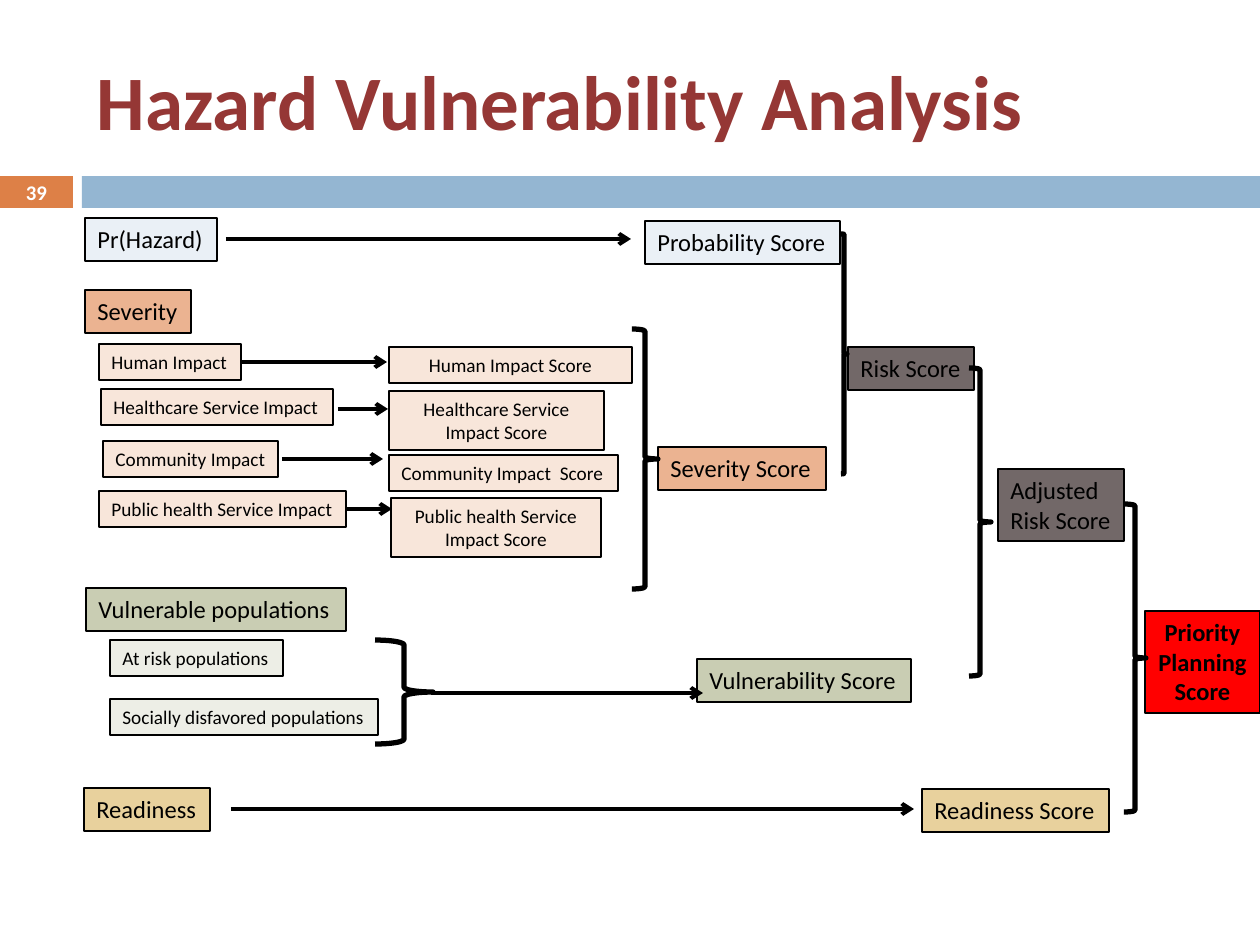
from lxml.etree import SubElement
from pptx import Presentation
from pptx.dml.color import RGBColor
from pptx.enum.shapes import MSO_CONNECTOR, MSO_SHAPE
from pptx.enum.text import MSO_ANCHOR, MSO_AUTO_SIZE, PP_ALIGN
from pptx.oxml.ns import qn
from pptx.util import Emu, Pt

SCALE = 914400 / 126  # EMU in one px
FONT = "Calibri"
COLORS = {
    "title": "953735", "number": "DD8047", "band": "94B6D2", "white": "FFFFFF",
    "black": "000000", "hazard": "EAF0F6", "severity": "EBB391",
    "impact": "F8E6DA", "vulnerable": "C9CDB3", "population": "EDEEE6",
    "readiness": "E8D19D", "risk": "726868", "priority": "FF0000",
}
TITLE = "Hazard Vulnerability Analysis"
PAGE_NUMBER = "39"
LARGE, SMALL = 14, 11

# Boxes: text, colour, size in points, left, top, width, lines
BOXES = [
    ("Pr(Hazard)", "hazard", LARGE, 85, 218, 132, 1),
    ("Severity", "severity", LARGE, 85, 290, 106, 1),
    ("Vulnerable populations", "vulnerable", LARGE, 86, 588, 260, 1),
    ("Readiness", "readiness", LARGE, 84, 788, 126, 1),
    ("Human Impact", "impact", SMALL, 99, 344, 142, 1),
    ("Healthcare Service Impact", "impact", SMALL, 101, 389, 232, 1),
    ("Community Impact", "impact", SMALL, 103, 441, 175, 1),
    ("Public health Service Impact", "impact", SMALL, 99, 491, 247, 1),
    ("At risk populations", "population", SMALL, 110, 640, 173, 1),
    ("Socially disfavored populations", "population", SMALL, 110, 699, 268, 1),
    ("Probability Score", "hazard", LARGE, 645, 221, 195, 1),
    ("Community Impact  Score", "impact", SMALL, 389, 455, 229, 1),
    ("Severity Score", "severity", LARGE, 658, 447, 168, 1),
    ("Risk Score", "risk", LARGE, 848, 347, 126, 1),
    ("Vulnerability Score", "vulnerable", LARGE, 697, 659, 214, 1),
    ("Adjusted\nRisk Score", "risk", LARGE, 998, 469, 126, 2),
    ("Readiness Score", "readiness", LARGE, 922, 789, 187, 1),
]
# Boxes whose text wraps and is centred
WRAPPED_BOXES = [
    ("Human Impact Score", "impact", SMALL, 389, 347, 243, 1),
    ("Healthcare Service Impact Score", "impact", SMALL, 389, 391, 215, 2),
    ("Public health Service Impact Score", "impact", SMALL, 391, 498, 210, 2),
    ("Priority Planning Score", "priority", LARGE, 1145, 611, 115, 3),
]
# Braces: left, top, width, height
BRACES = [
    (632, 329, 26, 260), (841, 234, 6, 240), (375, 640, 58, 104),
    (969, 368, 22, 308), (1124, 504, 22, 308),
]
# Arrows: start x, end x, y, box the arrow leaves from
ARROWS = [
    (226, 631, 239, None), (241, 387, 362, "Human Impact"),
    (338, 388, 409, None), (282, 383, 459, None),
    (347, 392, 509, "Public health Service Impact"),
    (431, 703, 693, None), (231, 914, 809, None),
]


def px(value):
    return Emu(round(value * SCALE))


def color(name):
    return RGBColor.from_string(COLORS[name])


def write(frame, text, size, color_name, bold=False, align=PP_ALIGN.LEFT):
    for index, line in enumerate(text.split("\n")):
        para = frame.add_paragraph() if index else frame.paragraphs[0]
        para.alignment = align
        span = para.add_run()
        span.text = line
        span.font.name, span.font.size, span.font.bold = FONT, Pt(size), bold
        span.font.color.rgb = color(color_name)


def add_shape(page, kind, *place):
    shape = page.shapes.add_shape(kind, *map(px, place))
    shape.shadow.inherit = False
    return shape


def add_bar(page, fill, *place):
    bar = add_shape(page, MSO_SHAPE.RECTANGLE, *place)
    bar.fill.solid()
    bar.fill.fore_color.rgb = color(fill)
    bar.line.fill.background()
    return bar


def add_box(page, text, fill, size, left, top, width, lines, wrap):
    height = round(lines * size * 2.11 + 13)
    box = add_bar(page, fill, left, top, width, height)
    box.line.color.rgb = color("black")
    box.line.width = Pt(0.75)
    frame = box.text_frame
    frame.word_wrap = wrap
    frame.auto_size = MSO_AUTO_SIZE.SHAPE_TO_FIT_TEXT
    frame.vertical_anchor = MSO_ANCHOR.TOP
    write(frame, text, size, "black", fill == "priority",
          PP_ALIGN.CENTER if wrap else PP_ALIGN.LEFT)
    return box


def add_brace(page, *place):
    brace = add_shape(page, MSO_SHAPE.RIGHT_BRACE, *place)
    brace.fill.background()
    brace.line.color.rgb = color("black")
    brace.line.width = Pt(3)


def add_arrow(page, start, end, y, source):
    arrow = page.shapes.add_connector(
        MSO_CONNECTOR.STRAIGHT, px(start), px(y), px(end), px(y))
    if source is not None:
        arrow.begin_connect(source, 3)
        arrow.end_y = arrow.begin_y
    arrow.line.color.rgb = color("black")
    arrow.line.width = Pt(2.25)
    properties = arrow.element.spPr
    SubElement(properties.find(qn("a:ln")), qn("a:tailEnd"), type="arrow")
    SubElement(properties, qn("a:effectLst"))


def main():
    deck = Presentation()
    deck.slide_width, deck.slide_height = px(1260), px(945)
    page = deck.slides.add_slide(deck.slide_layouts[5])

    # Title and band
    title = page.shapes.title
    title.left, title.top, title.width, title.height = map(px, (84, 32, 1124, 136))
    title.text_frame.auto_size = MSO_AUTO_SIZE.NONE
    title.text_frame.vertical_anchor = MSO_ANCHOR.MIDDLE
    write(title.text_frame, TITLE, 44, "title", True)
    number = add_bar(page, "number", 0, 176, 73, 32)
    add_bar(page, "band", 82, 176, 1178, 32)
    frame = number.text_frame
    frame.margin_top = frame.margin_bottom = 0
    frame.vertical_anchor = MSO_ANCHOR.MIDDLE
    write(frame, PAGE_NUMBER, 11.9, "white", True, PP_ALIGN.CENTER)

    # Boxes
    boxes = {}
    for rows, wrap in ((BOXES, False), (WRAPPED_BOXES, True)):
        for row in rows:
            boxes[row[0]] = add_box(page, *row, wrap)

    # Braces and arrows
    for place in BRACES:
        add_brace(page, *place)
    for start, end, y, source in ARROWS:
        add_arrow(page, start, end, y, boxes.get(source))

    deck.save("out.pptx")


if __name__ == "__main__":
    main()
